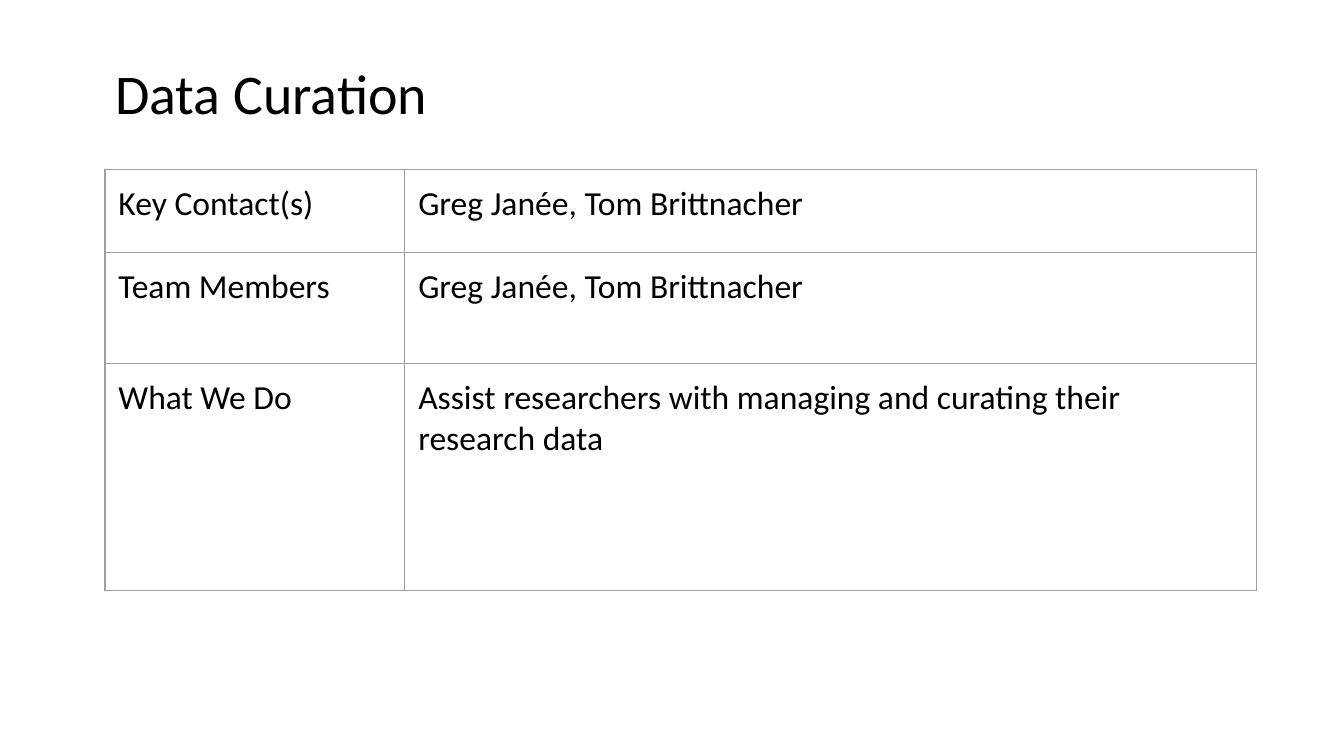
from typing import NamedTuple

from lxml.etree import SubElement
from pptx import Presentation
from pptx.dml.color import RGBColor
from pptx.enum.text import MSO_ANCHOR as Anchor
from pptx.oxml.ns import qn
from pptx.util import Pt

PX = 5715  # EMU per px, 160 px to the inch
FONT, INK, RULE = "Calibri", "000000", "9E9E9E"
RULE_WIDTH = Pt(0.75)
LEFT = 125


class Row(NamedTuple):
    label: str
    detail: str
    height: int


COLUMN_WIDTHS = (357, 1014)
ROWS = (
    Row("Key Contact(s)", "Greg Janée, Tom Brittnacher", 99),
    Row("Team Members", "Greg Janée, Tom Brittnacher", 132),
    Row("What We Do",
        "Assist researchers with managing and curating their research data", 270),
)


def px(length: int) -> int:
    return length * PX


def color(value: str) -> RGBColor:
    return RGBColor.from_string(value)


def write(frame, text: str, *, size: int, spacing: float = 1.0) -> None:
    frame.word_wrap = True
    para = frame.paragraphs[0]
    para.line_spacing = spacing
    span = para.add_run()
    span.text = text
    span.font.name = FONT
    span.font.size = Pt(size)
    span.font.color.rgb = color(INK)


def set_margins(target, margin: int) -> None:
    for side in ("left", "top", "right", "bottom"):
        setattr(target, f"margin_{side}", px(margin))


def add_borders(cell) -> None:
    properties = cell._tc.get_or_add_tcPr()
    for index, side in enumerate(("lnL", "lnR", "lnT", "lnB")):
        line = SubElement(properties, qn(f"a:{side}"), w=str(int(RULE_WIDTH)))
        fill = SubElement(line, qn("a:solidFill"))
        SubElement(fill, qn("a:srgbClr"), val=RULE)
        properties.insert(index, line)  # borders come before the cell fill


def add_title(page, text: str) -> None:
    box = page.shapes.add_textbox(px(LEFT), px(40), px(1275), px(123))
    frame = box.text_frame
    set_margins(frame, 12)
    frame.vertical_anchor = Anchor.BOTTOM
    write(frame, text, size=30, spacing=0.9)


def add_team_table(page, rows: tuple[Row, ...]) -> None:
    width, height = sum(COLUMN_WIDTHS), sum(row.height for row in rows)
    table = page.shapes.add_table(len(rows), len(COLUMN_WIDTHS), px(LEFT), px(202),
                                  px(width), px(height)).table
    table.first_row = table.horz_banding = False
    for column, column_width in zip(table.columns, COLUMN_WIDTHS):
        column.width = px(column_width)
    for r, row in enumerate(rows):
        table.rows[r].height = px(row.height)
        for c, text in enumerate((row.label, row.detail)):
            cell = table.cell(r, c)
            set_margins(cell, 16)
            cell.fill.background()
            add_borders(cell)
            write(cell.text_frame, text, size=18)


def main() -> None:
    deck = Presentation()
    deck.slide_width, deck.slide_height = px(1600), px(900)
    page = deck.slides.add_slide(deck.slide_layouts[6])
    add_title(page, "Data Curation")
    add_team_table(page, ROWS)
    deck.save("out.pptx")


if __name__ == "__main__":
    main()
